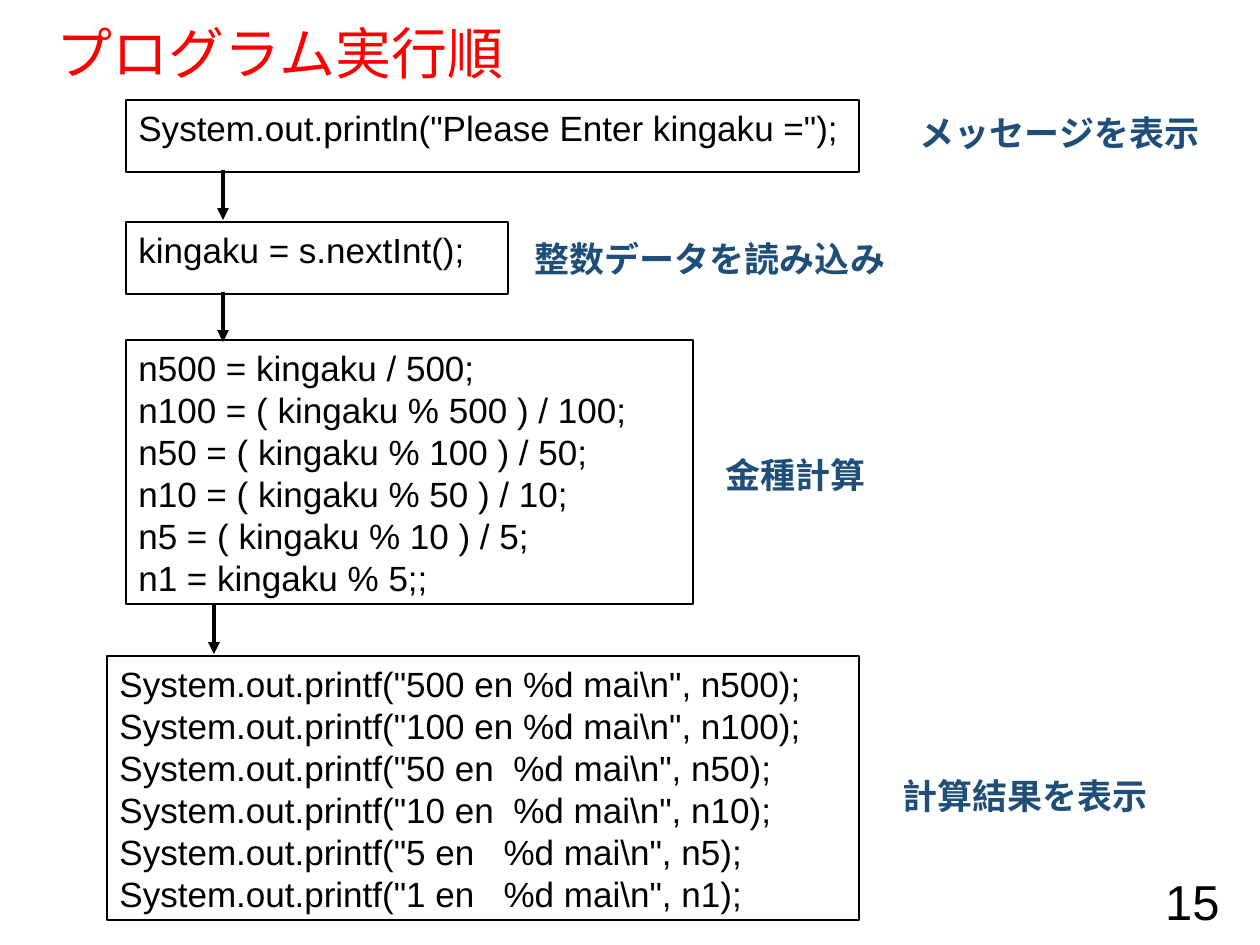
from lxml.etree import SubElement
from pptx import Presentation
from pptx.dml.color import RGBColor
from pptx.enum.shapes import MSO_CONNECTOR, MSO_SHAPE
from pptx.enum.text import MSO_ANCHOR, MSO_AUTO_SIZE, PP_ALIGN
from pptx.oxml.ns import qn
from pptx.util import Pt

PX = 7257  # EMU per px, at 126 px to the inch
BLACK, RED, NAVY = "000000", "FF0000", "1F4E79"


def color(code):
    return RGBColor.from_string(code)


def write(shape, lines, size, code, align=PP_ALIGN.LEFT,
          anchor=MSO_ANCHOR.TOP, bold=False, space=1.0):
    """Fill a shape with one paragraph per line."""
    frame = shape.text_frame
    frame.word_wrap = True
    frame.auto_size = MSO_AUTO_SIZE.NONE
    frame.vertical_anchor = anchor
    for i, line in enumerate(lines):
        para = frame.paragraphs[0] if i == 0 else frame.add_paragraph()
        para.alignment = align
        para.line_spacing = space
        para.space_before = Pt(0)
        run = para.add_run()
        run.text = line
        run.font.name = "Arial"
        run.font.size = Pt(size)
        run.font.bold = bold
        run.font.color.rgb = color(code)


deck = Presentation()
deck.slide_width, deck.slide_height = 1260 * PX, 945 * PX
slide = deck.slides.add_slide(deck.slide_layouts[5])
shapes = slide.shapes

title = shapes.title
title.left, title.top = 44 * PX, 24 * PX
title.width, title.height = 1166 * PX, 64 * PX
write(title, ["プログラム実行順"], 32, RED, anchor=MSO_ANCHOR.MIDDLE, space=0.9)

number = shapes.add_textbox(949 * PX, 876 * PX, 283 * PX, 50 * PX)
write(number, ["15"], 28, BLACK, PP_ALIGN.RIGHT, MSO_ANCHOR.MIDDLE)

# Code steps: left, top, width, height, lines
steps = [
    (126, 100, 733, 72, ['System.out.println("Please Enter kingaku =");']),
    (126, 222, 382, 72, ["kingaku = s.nextInt();"]),
    (126, 340, 567, 264, [
        "n500 = kingaku / 500;",
        "n100 = ( kingaku % 500 ) / 100;",
        "n50 = ( kingaku % 100 ) / 50;",
        "n10 = ( kingaku % 50 ) / 10;",
        "n5 = ( kingaku % 10 ) / 5;",
        "n1 = kingaku % 5;;",
    ]),
    (107, 656, 752, 264, [
        r'System.out.printf("500 en %d mai\n", n500);',
        r'System.out.printf("100 en %d mai\n", n100);',
        r'System.out.printf("50 en  %d mai\n", n50);',
        r'System.out.printf("10 en  %d mai\n", n10);',
        r'System.out.printf("5 en   %d mai\n", n5);',
        r'System.out.printf("1 en   %d mai\n", n1);',
    ]),
]
for left, top, width, height, lines in steps:
    box = shapes.add_shape(MSO_SHAPE.RECTANGLE, left * PX, top * PX,
                           width * PX, height * PX)
    box.shadow.inherit = False
    box.fill.background()
    box.line.color.rgb = color(BLACK)
    box.line.width = Pt(0.75)
    write(box, lines, 20, BLACK)

# Arrows between steps: x, start, end
for x, start, end in [(223, 170, 220), (223, 292, 342), (214, 604, 654)]:
    arrow = shapes.add_connector(MSO_CONNECTOR.STRAIGHT, x * PX, start * PX,
                                 x * PX, end * PX)
    arrow.line.color.rgb = color(BLACK)
    arrow.line.width = Pt(2.25)
    SubElement(arrow.line._get_or_add_ln(), qn("a:tailEnd"), type="triangle")
    SubElement(arrow._element.spPr, qn("a:effectLst"))

# Notes beside the steps: left, top, width, height, text
notes = [
    (859, 112, 401, 116, "メッセージを表示"),
    (450, 238, 520, 66, "整数データを読み込み"),
    (644, 454, 304, 127, "金種計算"),
    (839, 775, 372, 66, "計算結果を表示"),
]
for left, top, width, height, text in notes:
    note = shapes.add_textbox(left * PX, top * PX, width * PX, height * PX)
    write(note, [text], 20, NAVY, PP_ALIGN.CENTER, bold=True, space=0.85)

deck.save("out.pptx")
